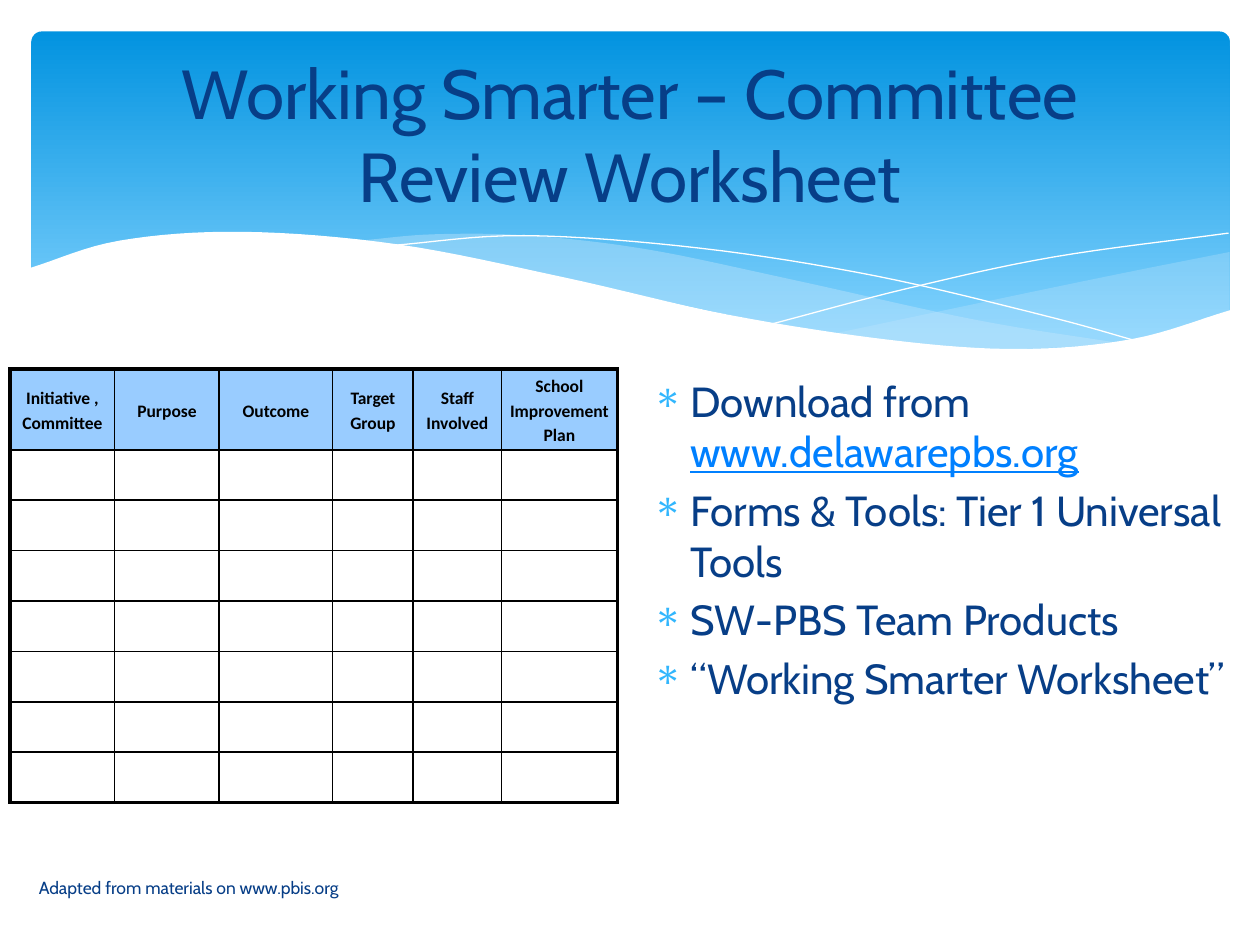
from pptx import Presentation, util as u
from pptx.dml.color import RGBColor
from pptx.enum import shapes, text
from pptx.oxml import parse_xml
from pptx.oxml.ns import nsdecls, qn
from lxml import etree

# Content
TITLE = "Working Smarter – Committee Review Worksheet"
CREDIT = "Adapted from materials on www.pbis.org"
HEADERS = ["Initiative , Committee", "Purpose", "Outcome", "Target Group",
           "Staff Involved", "School Improvement Plan"]
COL_WIDTHS = [0.83, 0.83, 0.9, 0.64, 0.7, 0.92]
HEADER_HEIGHT, ROW_HEIGHT, BLANK_ROWS = 0.64, 0.4, 7
NAVY, LINK, BULLET = "073E87", "0080FF", "31B6FD"
BULLETS = [
    [("Download from ", NAVY, False), ("www.delawarepbs.org", LINK, True)],
    [("Forms & Tools: Tier 1 Universal Tools", NAVY, False)],
    [("SW-PBS Team Products", NAVY, False)],
    [("“Working Smarter Worksheet”", NAVY, False)],
]

# Waves of the banner: (smooth curves joined end to end, fill, opacity %)
WAVES = [
    ([[(9.76, 2), (8.61, 2.23), (6.61, 2.65)],
      [(6.61, 2.65), (7.45, 2.75), (8.14, 2.78), (8.97, 2.7), (9.76, 2.47)]],
     "C6E7FC", 29),
    ([[(8.93, 2.73), (7.75, 2.54), (6.29, 2.22), (5.14, 1.98), (4.2, 1.87),
       (3.44, 1.86), (2.86, 1.91)],
      [(2.86, 1.91), (4.49, 2.22), (6.5, 2.64), (7.73, 2.77), (8.93, 2.73)]],
     "C6E7FC", 40),
    ([[(3.09, 1.95), (4.16, 1.87), (5.56, 1.97), (6.95, 2.19), (8.31, 2.51),
       (9.07, 2.72)]], None, 100),
    ([[(6.13, 2.57), (7.2, 2.29), (8.36, 2.04), (9.75, 1.85)]], None, 100),
    ([[(9.77, 2.46), (8.99, 2.69), (8.09, 2.77), (7.08, 2.7), (5.79, 2.5),
       (4.47, 2.2), (3.16, 1.94), (1.93, 1.84), (0.95, 1.91), (0.23, 2.13)],
      [(0.23, 3.29), (9.77, 3.29)]], "FFFFFF", 100),
]
STEPS = 8


def rgb(value):
    return RGBColor.from_string(value)


def place(sp, *box):
    sp.left, sp.top, sp.width, sp.height = map(u.Inches, box)


def add_run(p, words, size, color, **fmt):
    r = p.add_run()
    r.text = words
    r.font.color.rgb = rgb(color)
    for key, value in {"size": u.Pt(size), "name": "Cabin", **fmt}.items():
        setattr(r.font, key, value)


def smooth(knots):
    """Catmull-Rom curve through the knots."""
    def mirror(p, q):
        return tuple(2 * a - b for a, b in zip(p, q))

    pts = [mirror(*knots[:2]), *knots, mirror(knots[-1], knots[-2])]
    curve = []
    for quad in zip(pts, pts[1:], pts[2:], pts[3:]):
        for k in range(STEPS):
            t = k / STEPS
            curve.append(tuple(
                b + t * ((c - a) + t * ((2 * a - 5 * b + 4 * c - d)
                                        + t * (3 * b - a - 3 * c + d))) / 2
                for a, b, c, d in zip(*quad)))
    return curve + [knots[-1]]


def add_wave(s, curves, fill, opacity):
    points = [tuple(map(u.Inches, p)) for knots in curves for p in smooth(knots)]
    builder = s.shapes.build_freeform(*points[0])
    builder.add_line_segments(points[1:], close=fill is not None)
    sp = builder.convert_to_shape()
    sp.shadow.inherit = False
    if fill is None:
        sp.fill.background()
        sp.line.color.rgb = rgb("FFFFFF")
        sp.line.width = u.Pt(0)
        return
    sp.line.fill.background()
    sp.fill.solid()
    sp.fill.fore_color.rgb = rgb(fill)
    if opacity < 100:
        color = sp.fill._xPr.find(".//" + qn("a:srgbClr"))
        etree.SubElement(color, qn("a:alpha")).set("val", str(opacity * 1000))


def format_cell(cell, fill, thick_sides):
    cell.vertical_anchor = text.MSO_ANCHOR.MIDDLE
    cell.margin_left = cell.margin_right = u.Inches(0.04)
    cell.margin_top = cell.margin_bottom = u.Inches(0.03)
    tcPr = cell._tc.get_or_add_tcPr()
    for side in "LRTB":
        width = u.Pt(2.25 if side in thick_sides else 1)
        tcPr.append(parse_xml(
            f'<a:ln{side} {nsdecls("a")} w="{width}"><a:solidFill>'
            f'<a:srgbClr val="000000"/></a:solidFill></a:ln{side}>'))
    cell.fill.solid()
    cell.fill.fore_color.rgb = rgb(fill)


def add_worksheet(s):
    rows, cols = BLANK_ROWS + 1, len(HEADERS)
    heights = [HEADER_HEIGHT] + [ROW_HEIGHT] * BLANK_ROWS
    table = s.shapes.add_table(rows, cols, *map(u.Inches, (
        0.08, 2.93, sum(COL_WIDTHS), sum(heights)))).table
    table.first_row = table.horz_banding = False
    for col, width in zip(table.columns, COL_WIDTHS):
        col.width = u.Inches(width)
    for i, height in enumerate(heights):
        table.rows[i].height = u.Inches(height)
        for j in range(cols):
            edges = {"L": j == 0, "R": j == cols - 1, "T": i == 0, "B": i == rows - 1}
            format_cell(table.cell(i, j), "FFFFFF" if i else "99CCFF",
                        [side for side, outer in edges.items() if outer])
    for j, header in enumerate(HEADERS):
        p = table.cell(0, j).text_frame.paragraphs[0]
        p.alignment = text.PP_ALIGN.CENTER
        p.line_spacing, p.space_after = 1.15, u.Pt(10)
        add_run(p, header, 10, "000000", name="Calibri", bold=True)


def fill_bullets(tf):
    tf.auto_size = text.MSO_AUTO_SIZE.NONE
    for i, runs in enumerate(BULLETS):
        p = tf.add_paragraph() if i else tf.paragraphs[0]
        pPr = p._p.get_or_add_pPr()
        pPr.set("marL", str(u.Inches(0.3)))
        pPr.set("indent", str(u.Inches(-0.3)))
        for tag, attrs, child in (
                ("buClr", "", f'<a:srgbClr val="{BULLET}"/>'),
                ("buFont", 'typeface="Symbol"', ""), ("buChar", 'char="∗"', "")):
            pPr.append(parse_xml(f'<a:{tag} {nsdecls("a")} {attrs}>{child}</a:{tag}>'))
        for words, color, underline in runs:
            add_run(p, words, 24, color, underline=underline)


def main():
    prs = Presentation()
    prs.slide_width, prs.slide_height = u.Inches(10), u.Inches(7.5)
    s = prs.slides.add_slide(prs.slide_layouts[1])
    title, body = s.placeholders[0], s.placeholders[1]

    # Banner
    banner = s.shapes.add_shape(shapes.MSO_SHAPE.ROUNDED_RECTANGLE, 0, 0, 0, 0)
    place(banner, 0.25, 0.25, 9.51, 2.7)
    banner.adjustments[0] = 0.03
    banner.shadow.inherit = False
    banner.line.fill.background()
    banner.fill.gradient()
    banner.fill.gradient_angle = 270
    for stop, (pos, color) in zip(banner.fill.gradient_stops,
                                  [(0, "0293E0"), (0.9, "83D3FE")]):
        stop.position, stop.color.rgb = pos, rgb(color)
    for wave in WAVES:
        add_wave(s, *wave)

    # Title, in front of the banner
    s.shapes._spTree.append(title._element)
    place(title, 0.5, 0.37, 9, 1.37)
    title.text_frame.auto_size = text.MSO_AUTO_SIZE.NONE
    add_run(title.text_frame.paragraphs[0], TITLE, 39.6, NAVY)

    # Credit line
    credit = s.shapes.add_textbox(0, 0, 0, 0)
    place(credit, 0.21, 6.84, 4.14, 0.4)
    credit.text_frame.word_wrap = True
    credit.text_frame.vertical_anchor = text.MSO_ANCHOR.MIDDLE
    add_run(credit.text_frame.paragraphs[0], CREDIT, 10, NAVY)

    # Worksheet and download steps
    add_worksheet(s)
    s.shapes._spTree.append(body._element)
    place(body, 5.08, 2.93, 5, 3.77)
    fill_bullets(body.text_frame)
    prs.save("out.pptx")


if __name__ == "__main__":
    main()
